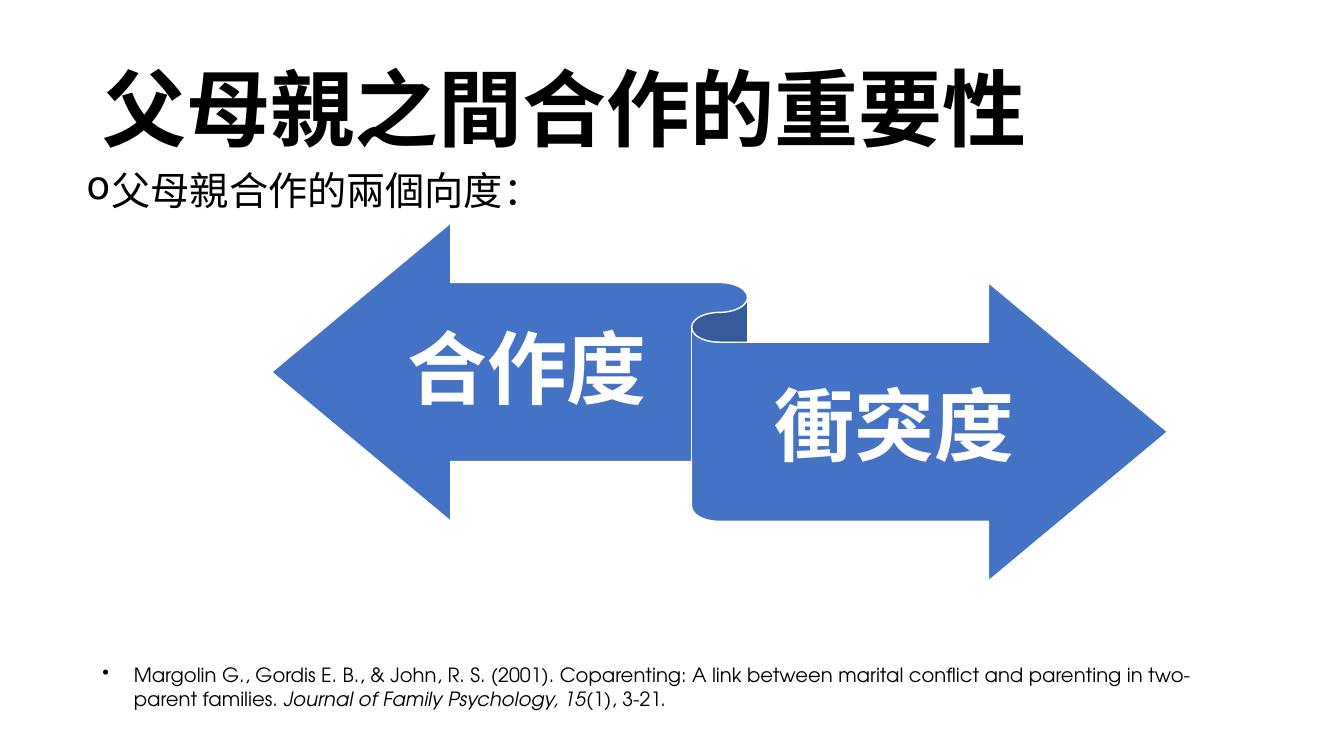
from lxml import etree
from pptx import Presentation
from pptx.dml.color import RGBColor
from pptx.enum.shapes import MSO_SHAPE
from pptx.enum.text import MSO_ANCHOR, PP_ALIGN
from pptx.oxml.ns import qn
from pptx.util import Pt

RIBBON = MSO_SHAPE.LEFT_RIGHT_RIBBON
TOP, MIDDLE = MSO_ANCHOR.TOP, MSO_ANCHOR.MIDDLE
LEFT, CENTER = PP_ALIGN.LEFT, PP_ALIGN.CENTER

THEME = {
    "ink": RGBColor(0x00, 0x00, 0x00),
    "white": RGBColor(0xFF, 0xFF, 0xFF),
    "blue": RGBColor(0x44, 0x72, 0xC4),
    "chinese": "Noto Sans CJK SC",
    "latin": "TeX Gyre Adventor",
    "title": Pt(60),
    "label": Pt(57),
    "body": Pt(28),
    "citation": Pt(14),
}


def add_text(page, place, spans, font, frame_format, para_format):
    """Add a one-paragraph text box; spans are (text, italic) pairs."""
    box = page.shapes.add_textbox(*(Pt(length) for length in place))
    frame = box.text_frame
    para = frame.paragraphs[0]
    for target, values in ((frame, {"word_wrap": True, **frame_format}), (para, para_format)):
        for name, value in values.items():
            setattr(target, name, value)
    color = font["color"]
    for text, italic in spans:
        span = para.add_run()
        span.text = text
        span.font.color.rgb = color
        span.font.italic = italic
        for name in ("name", "size", "bold"):
            setattr(span.font, name, font[name])
        east_asian = etree.SubElement(span.font._element, qn("a:ea"))
        east_asian.set("typeface", font["name"])
    return para


def add_bullet(para, mark, indent):
    """Give a paragraph a bullet with a hanging indent."""
    properties = para._p.get_or_add_pPr()
    properties.set("marL", str(Pt(indent)))
    properties.set("indent", str(-Pt(indent)))
    etree.SubElement(properties, qn("a:buChar")).set("char", mark)


deck = Presentation()
deck.slide_width, deck.slide_height = Pt(960), Pt(540)
page = deck.slides.add_slide(deck.slide_layouts[6])

# Title
title_font = {"name": THEME["chinese"], "size": THEME["title"], "bold": True, "color": THEME["ink"]}
add_text(page, (66, 28.75, 828, 104.4), [("父母親之間合作的重要性", False)], title_font,
         {"vertical_anchor": MIDDLE}, {"alignment": LEFT, "line_spacing": 0.9})

# Lead-in line
body_font = {"name": THEME["chinese"], "size": THEME["body"], "bold": False, "color": THEME["ink"]}
lead_in = add_text(page, (54.7, 118.8, 828, 44.6), [("父母親合作的兩個向度：", False)], body_font,
                   {"vertical_anchor": TOP},
                   {"alignment": LEFT, "line_spacing": 0.9, "space_before": Pt(10)})
add_bullet(lead_in, "o", 18)

# Two-way ribbon
ribbon = page.shapes.add_shape(RIBBON, Pt(194), Pt(159.1), Pt(640), Pt(256))
ribbon.shadow.inherit = False
ribbon.fill.solid()
ribbon.fill.fore_color.rgb = THEME["blue"]
ribbon.line.color.rgb = THEME["white"]
ribbon.line.width = Pt(1)

# Ribbon labels
label_font = {"name": THEME["chinese"], "size": THEME["label"], "bold": True, "color": THEME["white"]}
label_frame = {"vertical_anchor": MIDDLE, "margin_left": 0, "margin_right": 0,
               "margin_top": Pt(16), "margin_bottom": Pt(17)}
for label, left, top, width in (("合作度", 270.8, 203.9, 211.2), ("衝突度", 514, 244.8, 249.6)):
    add_text(page, (left, top, width, 125.4), [(label, False)], label_font, label_frame,
             {"alignment": CENTER, "line_spacing": 0.9})

# Citation
citation_font = {"name": THEME["latin"], "size": THEME["citation"], "bold": False, "color": THEME["ink"]}
citation = add_text(page, (66, 470.2, 828, 41.2), [
    ("Margolin G., Gordis E. B., & John, R. S. (2001). Coparenting: A link between "
     "marital conflict and parenting in two-parent families. ", False),
    ("Journal of Family Psychology, 15", True),
    ("(1), 3-21.", False),
], citation_font, {"vertical_anchor": TOP}, {"alignment": LEFT})
add_bullet(citation, "•", 22.5)

deck.save("out.pptx")
